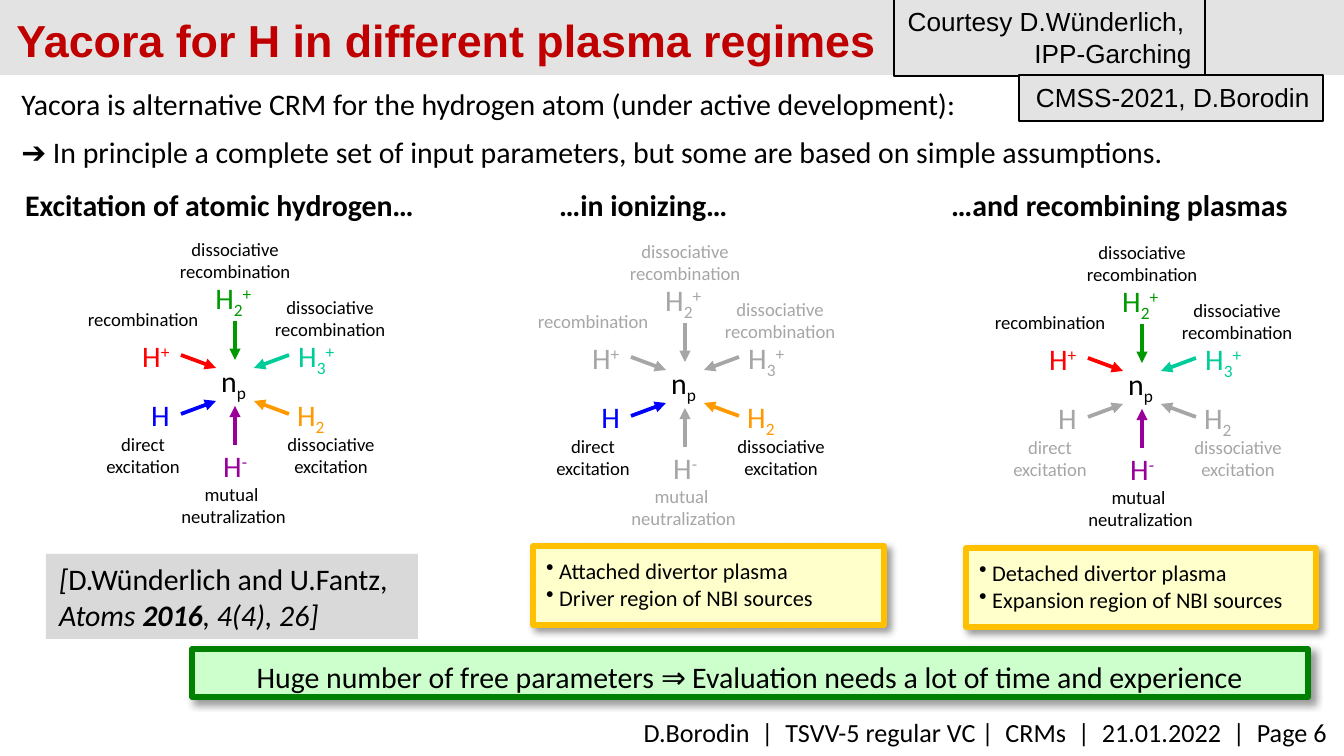
from lxml.etree import SubElement
from pptx import Presentation
from pptx.dml.color import RGBColor
from pptx.enum.shapes import MSO_CONNECTOR, MSO_SHAPE
from pptx.enum.text import MSO_ANCHOR, MSO_AUTO_SIZE, PP_ALIGN
from pptx.oxml.ns import qn
from pptx.util import Emu, Pt

COLORS = {
    "black": "000000", "title": "C00000", "band": "E3E3E3", "citation": "D9D9D9",
    "muted": "A6A6A6", "blue": "0000FF", "red": "FF0000", "teal": "00CC99",
    "orange": "FF9900", "purple": "990099", "green": "009900",
    "note": "FFFFCC", "gold": "FFC000", "mint": "CCFFCC", "forest": "008000",
}
SCALE = 914400 / 134.4
SUB, SUP = {"baseline": -25000}, {"baseline": 30000}


def px(length):
    return Emu(round(length * SCALE))


def apply(target, values):
    for name, value in values.items():
        setattr(target, name, value)


class Deck:
    font = "Calibri"
    size = 16

    def __init__(self, width, height):
        self.presentation = Presentation()
        apply(self.presentation, {"slide_width": px(width), "slide_height": px(height)})
        self.slide = self.presentation.slides.add_slide(self.presentation.slide_layouts[1])
        self.shapes = self.slide.shapes

    def color(self, name):
        return RGBColor.from_string(COLORS[name])

    def fill_text(self, shape, lines, color="black", size=None, font=None,
                  layout=None, frame=None, bold=None, bullet=None):
        text_frame = shape.text_frame
        apply(text_frame, {"word_wrap": True, "vertical_anchor": MSO_ANCHOR.TOP,
                           "auto_size": MSO_AUTO_SIZE.NONE} | (frame or {}))
        for index, line in enumerate(lines):
            paragraph = text_frame.paragraphs[0] if index == 0 else text_frame.add_paragraph()
            apply(paragraph, {"alignment": PP_ALIGN.LEFT, "space_before": Pt(0)} | (layout or {}))
            if index == 0:
                paragraph.space_before = Pt(0)
            properties = paragraph._p.get_or_add_pPr()
            indent = px(13) if bullet else 0
            properties.set("marL", str(indent))
            properties.set("indent", str(-indent))
            if bullet:
                SubElement(properties, qn("a:buChar"), char=bullet)
            else:
                SubElement(properties, qn("a:buNone"))
            for words, styling in [(line, {})] if isinstance(line, str) else line:
                run = paragraph.add_run()
                run.text = words
                apply(run.font, {"name": font or self.font, "size": Pt(size or self.size), "bold": bold})
                run.font.color.rgb = self.color(color)
                for name, value in styling.items():
                    run._r.get_or_add_rPr().set(name, str(value))

    def placeholder(self, index, area, lines, **styling):
        holder = self.slide.placeholders[index]
        apply(holder, dict(zip(("left", "top", "width", "height"), map(px, area))))
        self.fill_text(holder, lines, **styling)

    def text(self, area, lines, **styling):
        self.fill_text(self.shapes.add_textbox(*map(px, area)), lines, **styling)

    def label(self, area, lines, color, **styling):
        self.text(area, lines, color=color, frame={
            "word_wrap": False, "auto_size": MSO_AUTO_SIZE.SHAPE_TO_FIT_TEXT}, **styling)

    def panel(self, area, fill, lines=(), border=None, weight=1.5, shadow=False, **styling):
        panel = self.shapes.add_shape(MSO_SHAPE.RECTANGLE, *map(px, area))
        panel.shadow.inherit = False
        panel.fill.solid()
        panel.fill.fore_color.rgb = self.color(fill)
        if border:
            panel.line.color.rgb = self.color(border)
            panel.line.width = Pt(weight)
        else:
            panel.line.fill.background()
        if shadow:
            effects = panel._element.spPr.find(qn("a:effectLst"))
            outer = SubElement(effects, qn("a:outerShdw"), blurRad=str(Pt(4)),
                               dist=str(Pt(3)), dir="2700000", algn="tl", rotWithShape="0")
            tint = SubElement(outer, qn("a:srgbClr"), val=COLORS["black"])
            SubElement(tint, qn("a:alpha"), val="40000")
        if lines:
            self.fill_text(panel, lines, **styling)
        return panel

    def arrow(self, ends, color):
        arrow = self.shapes.add_connector(MSO_CONNECTOR.STRAIGHT, *map(px, ends))
        arrow.line.color.rgb = self.color(color)
        arrow.line.width = Pt(2)
        SubElement(arrow.line._get_or_add_ln(), qn("a:tailEnd"), type="triangle")
        SubElement(arrow._element.spPr, qn("a:effectLst"))

    def send_to_back(self, shape):
        self.shapes._spTree.insert(2, shape._element)


CENTERED = {"alignment": PP_ALIGN.CENTER}
RIGHT = {"alignment": PP_ALIGN.RIGHT}
LOOSE = {"line_spacing": 1.1}
H = ("H", {})

CHANNELS = [
    ("blue", [H], (-97, 7, 46), ["direct", "excitation"], (-145, 43, 106, 59), (-54, 31, -19, 18)),
    ("red", [H, ("+", SUP)], (-106, -52, 56),
     ["recombination"], (-164, -82, 144, 36), (-54, -28, -19, -15)),
    ("teal", [H, ("3", SUB), ("+", SUP)], (50, -52, 66),
     ["dissociative", "recombination"], (23, -94, 144, 58), (54, -28, 19, -15)),
    ("orange", [H, ("2", SUB)], (49, 7, 56),
     ["dissociative", "excitation"], (38, 43, 116, 59), (54, 31, 19, 18)),
    ("purple", [H, ("-", SUP)], (-25, 58, 52),
     ["mutual ", "neutralization"], (-70, 93, 137, 58), (0, 62, 0, 23)),
    ("green", [H, ("2", SUB), ("+", SUP)], (-33, -110, 66),
     ["dissociative", "recombination"], (-72, -152, 144, 58), (0, -62, 0, -23)),
]
EXCITATION = {"blue", "orange"}
RECOMBINATION = {"red", "teal", "purple", "green"}
REGIMES = [
    ("Excitation of atomic hydrogen…", (12, 177, 493, 370), (235, 383), EXCITATION | RECOMBINATION),
    ("…in ionizing…", (546, 177, 382, 445), (685, 385), EXCITATION),
    ("…and recombining plasmas", (938, 177, 406, 434), (1142, 386), RECOMBINATION),
]
PLASMAS = [
    ((533, 546, 351, 79), ["Attached divertor plasma", "Driver region of NBI sources"]),
    ((966, 548, 350, 79), ["Detached divertor plasma", "Expansion region of NBI sources"]),
]


def draw_regime(deck, heading, heading_area, center, active):
    cx, cy = center
    deck.text(heading_area, [heading], bold=True, layout=LOOSE)
    deck.label((cx - 27, cy - 27, 55, 50), [[("n", {}), ("p", SUB)]], "black")
    for color, species, (x, y, width), process, (left, top, wide, high), ends in CHANNELS:
        shown = color in active
        tone = color if shown else "muted"
        deck.label((cx + x, cy + y, width, 50), [species], tone)
        deck.label((cx + left, cy + top, wide, high), process,
                   "black" if shown else "muted", size=10, layout=CENTERED)
        x1, y1, x2, y2 = ends
        deck.arrow((cx + x1, cy + y1, cx + x2, cy + y2), tone)


def main():
    deck = Deck(1344, 756)
    deck.send_to_back(deck.panel((0, 0, 1344, 75), "band"))
    deck.placeholder(0, (3, -10, 1210, 94), ["Yacora for H in different plasma regimes"],
                     color="title", size=24, font="Arial", bold=True,
                     layout={"line_spacing": Pt(32)}, frame={"vertical_anchor": MSO_ANCHOR.MIDDLE})
    deck.placeholder(1, (8, 75, 1234, 164), [
        "Yacora is alternative CRM for the hydrogen atom (under active development):",
        "➔ In principle a complete set of input parameters, but some are based on simple assumptions.",
    ], layout=LOOSE | {"space_before": Pt(4.8)})
    deck.text((267, 710, 1074, 46),
              ["D.Borodin  |  TSVV-5 regular VC |  CRMs  |  21.01.2022  |  Page 6"],
              size=14, layout=RIGHT)
    for regime in REGIMES:
        draw_regime(deck, *regime)
    for area, examples in PLASMAS:
        deck.panel(area, "note", examples, "gold", 3, True, size=12, bullet="•",
                   frame={"margin_top": px(11)})
    deck.panel((192, 649, 1116, 48), "mint",
               ["Huge number of free parameters ⇒ Evaluation needs a lot of time and experience"],
               "forest", 3, True, layout=CENTERED | LOOSE)
    italic = {"i": 1}
    deck.panel((46, 554, 372, 85), "citation", [
        [("[", italic), ("D.Wünderlich and U.Fantz,", {})],
        [("Atoms ", italic), ("2016", italic | {"b": 1}), (", 4(4), 26]", italic)],
    ])
    for area, credit in [
        ((894, -1, 311, 77), ["Courtesy D.Wünderlich, ", "IPP-Garching"]),
        ((1019, 75, 304, 46), ["CMSS-2021, D.Borodin"]),
    ]:
        deck.panel(area, "band", credit, "black", size=14, font="Arial", layout=RIGHT)
    deck.presentation.save("out.pptx")


if __name__ == "__main__":
    main()
